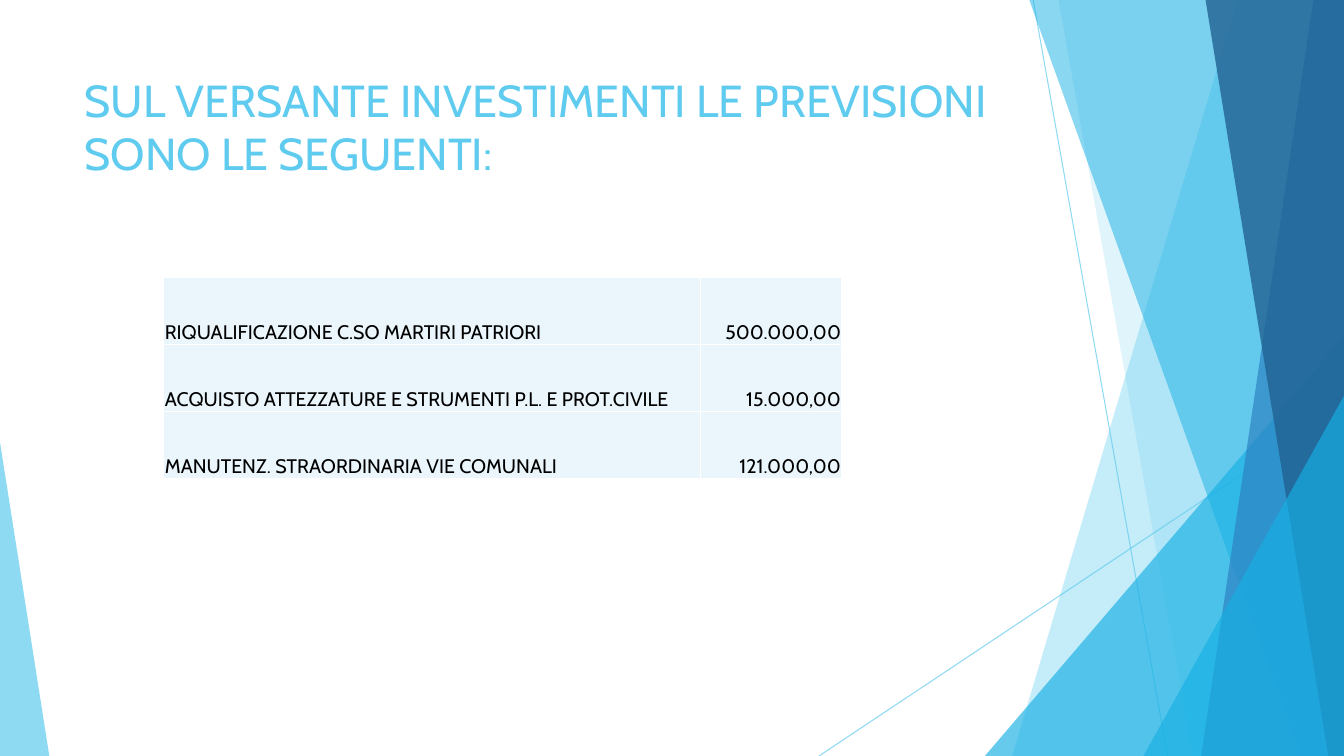
from lxml import etree
from pptx import Presentation, util as u
from pptx.dml.color import RGBColor
from pptx.enum import shapes, text
from pptx.oxml import ns

PX = 9525  # EMU per px, 96 px to the inch
W, H = 1280, 720

FONT = "Cabin"
SKY = RGBColor(0x5F, 0xCB, 0xEF)
CYAN = RGBColor(0x17, 0xB0, 0xE4)
BLUE = RGBColor(0x2E, 0x83, 0xC3)
NAVY = RGBColor(0x22, 0x62, 0x92)
PALE = RGBColor(0xEA, 0xF6, 0xFC)
WHITE = RGBColor(0xFF, 0xFF, 0xFF)
BLACK = RGBColor(0x00, 0x00, 0x00)

INVESTMENTS = [
    ("RIQUALIFICAZIONE C.SO MARTIRI PATRIORI", "500.000,00"),
    ("ACQUISTO ATTEZZATURE E STRUMENTI P.L. E PROT.CIVILE", "15.000,00"),
    ("MANUTENZ. STRAORDINARIA VIE COMUNALI", "121.000,00"),
]


def px(*lengths):
    return [u.Emu(n * PX) for n in lengths]


def set_alpha(fill, percent):
    """Make a solid fill partly transparent."""
    color = fill._xPr.find(".//" + ns.qn("a:srgbClr"))
    etree.SubElement(color, ns.qn("a:alpha"), val=str(percent * 1000))


def paint(sp, color, percent):
    sp.shadow.inherit = False
    sp.fill.solid()
    sp.fill.fore_color.rgb = color
    set_alpha(sp.fill, percent)
    sp.line.fill.background()


def style_run(r, size, color):
    r.font.name = FONT
    r.font.size = u.Pt(size)
    r.font.color.rgb = color


def add_ray(s, x1, y1, x2, y2):
    """Thin translucent line."""
    ray = s.shapes.add_connector(shapes.MSO_CONNECTOR.STRAIGHT, *px(x1, y1, x2, y2))
    ray.line.width = u.Pt(0.75)
    ray.line.fill.solid()
    ray.line.color.rgb = SKY
    set_alpha(ray.line.fill, 70)
    etree.SubElement(ray._element.spPr, ns.qn("a:effectLst"))


def add_band(s, top_x, bottom_x, color, percent):
    """Full-height facet from a slanted left edge to the slide's right edge."""
    builder = s.shapes.build_freeform(top_x, -1, scale=PX)
    builder.add_line_segments([(W, -1), (W, H), (bottom_x, H)], close=True)
    paint(builder.convert_to_shape(), color, percent)


def add_corner(s, left, top, width, apex, color, percent):
    """Right triangle standing on the slide's bottom edge."""
    sp = s.shapes.add_shape(shapes.MSO_SHAPE.ISOSCELES_TRIANGLE,
                            *px(left, top, width, H - top))
    sp.adjustments[0] = apex
    paint(sp, color, percent)


def add_facets(s):
    add_ray(s, 984, 0, 1112, H)
    add_ray(s, W, 387, 780, H)
    add_band(s, 1179, 964, SKY, 36)
    add_band(s, 1008, 1136, SKY, 20)
    add_corner(s, 938, 320, W - 938, 1, CYAN, 66)
    add_band(s, 980, 1239, CYAN, 50)
    add_band(s, 1251, 1144, BLUE, 70)
    add_band(s, 1148, 1265, NAVY, 80)
    add_corner(s, 1089, 377, W - 1089, 1, CYAN, 66)
    add_corner(s, 0, 421, 47, 0, SKY, 70)


def add_title(s, left, top, width, height):
    title = s.shapes.title
    title.left, title.top, title.width, title.height = px(left, top, width, height)
    tf = title.text_frame
    tf.text = "SUL VERSANTE INVESTIMENTI LE PREVISIONI SONO LE SEGUENTI:"
    tf.word_wrap = True
    tf.auto_size = text.MSO_AUTO_SIZE.NONE
    tf.vertical_anchor = text.MSO_ANCHOR.TOP
    p = tf.paragraphs[0]
    p.alignment = text.PP_ALIGN.LEFT
    style_run(p.runs[0], 32, SKY)
    s.shapes._spTree.append(title._element)  # in front of the facets


def add_borders(cell):
    tc_pr = cell._tc.get_or_add_tcPr()
    for side in ("lnL", "lnR", "lnT", "lnB"):
        ln = etree.SubElement(tc_pr, ns.qn("a:" + side), w=str(u.Pt(1)))
        fill = etree.SubElement(ln, ns.qn("a:solidFill"))
        etree.SubElement(fill, ns.qn("a:srgbClr"), val=str(WHITE))


def fill_cell(cell, value, alignment):
    cell.text = value
    cell.vertical_anchor = text.MSO_ANCHOR.BOTTOM
    cell.margin_left, cell.margin_right, cell.margin_top, cell.margin_bottom = px(1, 1, 1, 0)
    add_borders(cell)
    cell.fill.solid()
    cell.fill.fore_color.rgb = PALE
    p = cell.text_frame.paragraphs[0]
    p.alignment = alignment
    style_run(p.runs[0], 14, BLACK)


def add_investments(s, left, top, width, height):
    amount_width = 135
    table = s.shapes.add_table(len(INVESTMENTS), 2, *px(left, top, width, height)).table
    table.first_row = table.horz_banding = False
    table.columns[0].width, table.columns[1].width = px(width - amount_width, amount_width)
    for i, row in enumerate(INVESTMENTS):
        for j, alignment in enumerate((text.PP_ALIGN.LEFT, text.PP_ALIGN.RIGHT)):
            fill_cell(table.cell(i, j), row[j], alignment)


def main():
    prs = Presentation()
    prs.slide_width, prs.slide_height = px(W, H)
    s = prs.slides.add_slide(prs.slide_layouts[5])
    add_facets(s)
    add_title(s, 71, 64, 902, 138)
    add_investments(s, 156, 264, 646, 192)
    prs.save("out.pptx")


if __name__ == "__main__":
    main()
